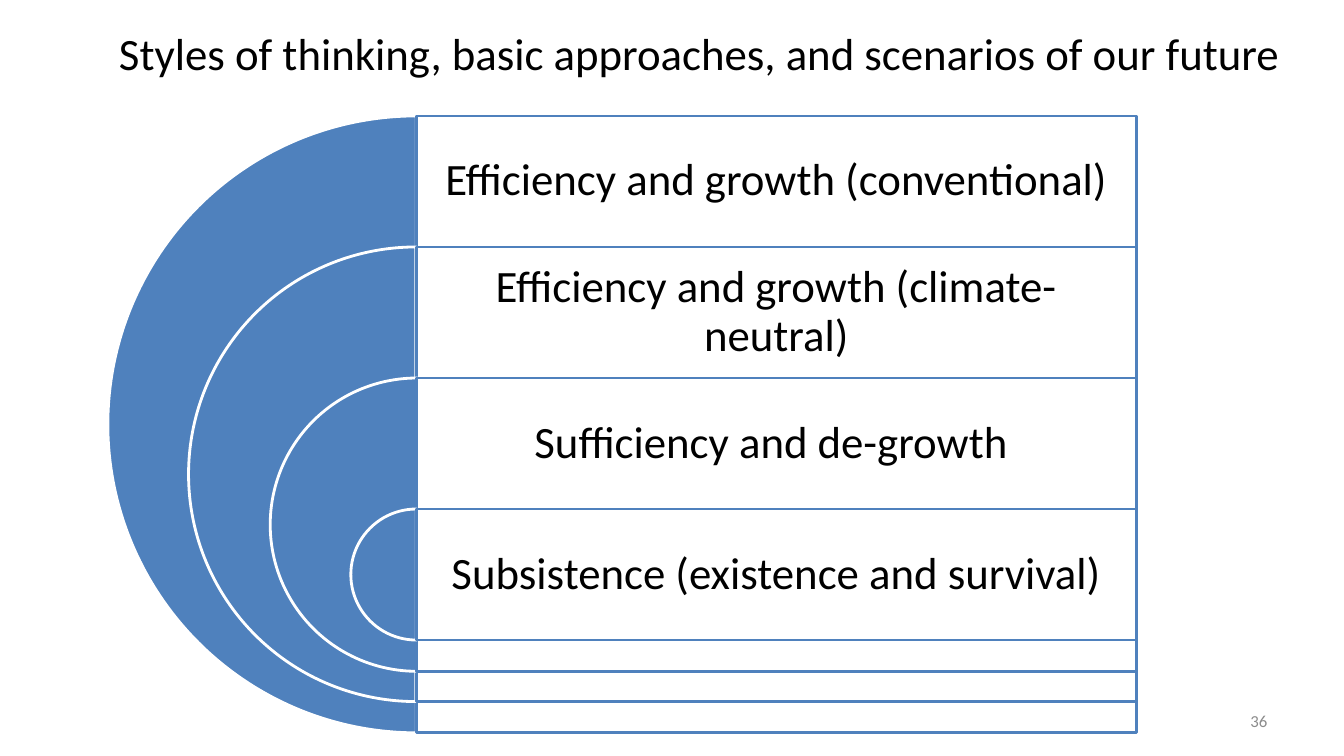
from pptx import Presentation
from pptx.dml.color import RGBColor
from pptx.enum.shapes import MSO_SHAPE as Shape
from pptx.enum.text import MSO_ANCHOR as Anchor, MSO_AUTO_SIZE as AutoSize, PP_ALIGN as Align
from pptx.oxml.ns import qn
from pptx.util import Pt
from lxml.etree import SubElement

PX = 9144
BLUE = "4F81BD"
WHITE = "FFFFFF"
BLACK = "000000"
APPROACHES = [
    "Efficiency and growth (conventional)",
    "Efficiency and growth (climate-neutral)",
    "Sufficiency and de-growth ",
    "Subsistence (existence and survival)",
]


def px(*lengths):
    return [round(length) * PX for length in lengths]


def colour(value):
    return RGBColor.from_string(value)


def write(frame, text, size, ink, align, anchor):
    frame.word_wrap = True
    frame.auto_size = AutoSize.NONE
    frame.vertical_anchor = anchor
    frame.text = text
    para = frame.paragraphs[0]
    para.alignment = align
    para.font.name = "Calibri"
    para.font.size = Pt(size)
    para.font.color.rgb = colour(ink)
    return para


def add_outlined(page, kind, box, fill, line):
    shape = page.shapes.add_shape(kind, *px(*box))
    shape.shadow.inherit = False
    shape.fill.solid()
    shape.fill.fore_color.rgb = colour(fill)
    shape.line.color.rgb = colour(line)
    shape.line.width = Pt(2)
    return shape


def add_heading(page, box, text):
    title = page.shapes.title
    title.left, title.top, title.width, title.height = px(*box)
    write(title.text_frame, text, 32, BLACK, Align.LEFT, Anchor.TOP)


def add_page_number(page, box, number):
    label = page.shapes.add_textbox(*px(*box))
    write(label.text_frame, number, 12, "8C8C8C", Align.RIGHT, Anchor.MIDDLE)


def add_layer(page, box, row_height, text):
    left, top, width, height = box
    half_disc = add_outlined(page, Shape.PIE, (left - height / 2, top, height, height), BLUE, WHITE)
    half_disc.adjustments[0] = 54
    half_disc.adjustments[1] = 162

    panel = add_outlined(page, Shape.RECTANGLE, box, WHITE, BLUE)
    tint = panel.fill._xPr.find(qn("a:solidFill"))[0]
    SubElement(tint, qn("a:alpha")).set("val", "90000")

    label = page.shapes.add_textbox(*px(left, top, width, row_height))
    frame = label.text_frame
    para = write(frame, text, 32, BLACK, Align.CENTER, Anchor.MIDDLE)
    para.line_spacing = 0.9
    frame.margin_left = frame.margin_right = frame.margin_top = frame.margin_bottom = 13 * PX


def add_nested_layers(page, box, row_height, texts):
    left, top, width, height = box
    shrink = (height - row_height) / (len(texts) - 1)
    for index, text in enumerate(texts):
        layer = (left, top + index * row_height, width, height - index * shrink)
        add_layer(page, layer, row_height, text)


def main():
    deck = Presentation()
    deck.slide_width, deck.slide_height = px(1333, 750)
    page = deck.slides.add_slide(deck.slide_layouts[5])
    add_heading(page, (108, 21, 1181, 64),
                "Styles of thinking, basic approaches, and scenarios of our future")
    add_page_number(page, (956, 695, 311, 40), "36")
    add_nested_layers(page, (413, 115, 714, 612), 130, APPROACHES)
    deck.save("out.pptx")


if __name__ == "__main__":
    main()
